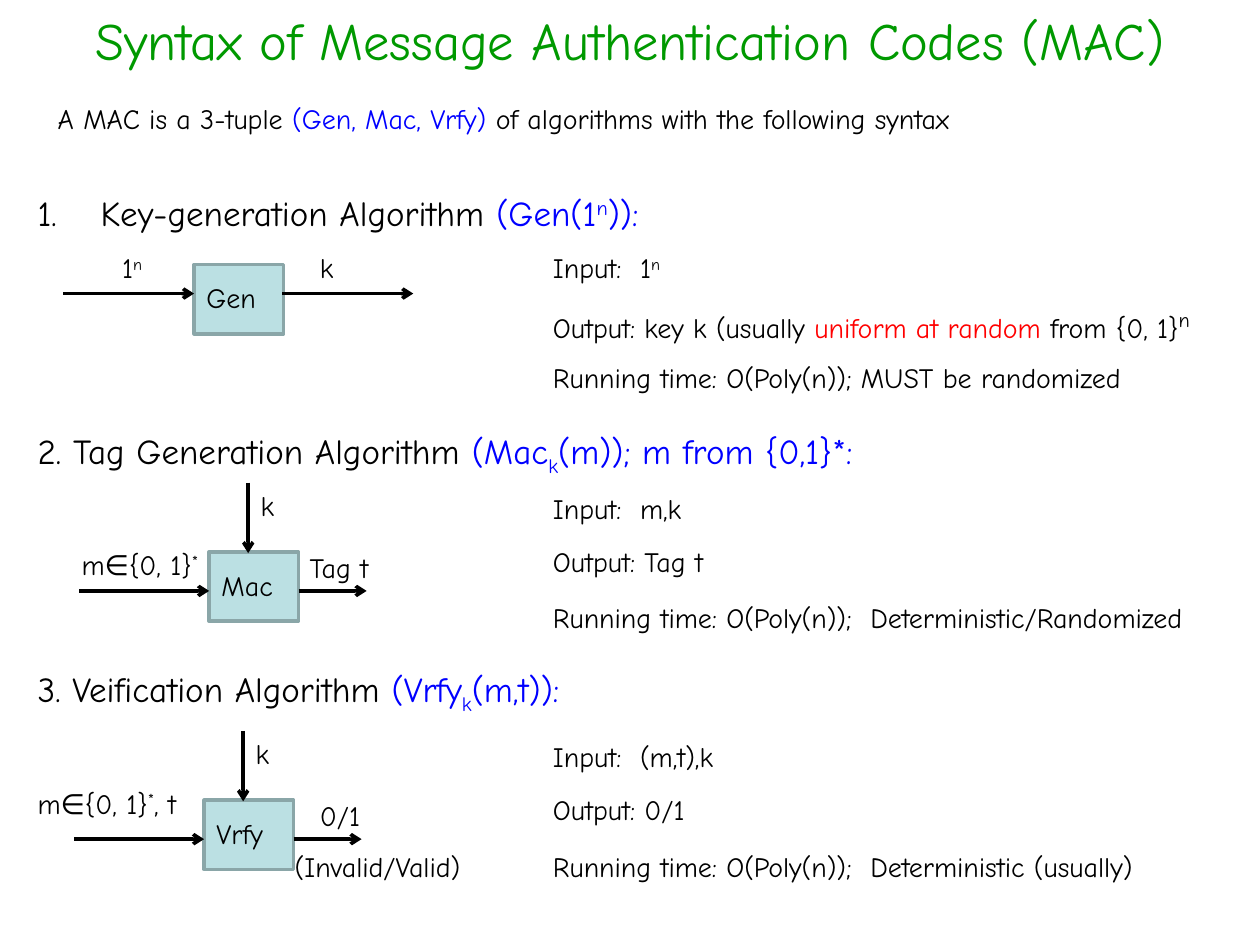
from lxml import etree
from pptx import Presentation
from pptx import util as u
from pptx.dml.color import RGBColor
from pptx.enum import shapes, text
from pptx.oxml import ns

PX = 9144
BLACK, BLUE, RED, GREEN = "000000", "0000FF", "FF0000", "009900"


def px(n):
    return u.Emu(n * PX)


def rgb(value):
    return RGBColor.from_string(value)


class Board:
    font = "Comic Neue"
    size = 16
    fill = "BBE0E3"
    edge = "8AA6A8"
    weight = 2

    def __init__(self, slide):
        self.slide = slide

    def add_runs(self, tf, runs, size):
        tf.word_wrap = True
        tf.vertical_anchor = text.MSO_ANCHOR.TOP
        p = tf.paragraphs[0]
        for words, color, base, *own in runs:
            r = p.add_run()
            r.text = words
            r.font.name = self.font
            r.font.size = u.Pt(own[0] if own else size)
            r.font.color.rgb = rgb(color)
            if base:
                r.font._element.set("baseline", str(base * 1000))
        return p

    def title(self, x, y, w, h, words):
        sp = self.slide.shapes.title
        sp.left, sp.top, sp.width, sp.height = map(px, (x, y, w, h))
        sp.text_frame.auto_size = text.MSO_AUTO_SIZE.NONE
        p = self.add_runs(sp.text_frame, [(words, GREEN, 0)], 30)
        p.alignment = text.PP_ALIGN.CENTER

    def label(self, x, y, w, runs, h=37, size=None):
        if isinstance(runs, str):
            runs = [(runs, BLACK, 0)]
        sp = self.slide.shapes.add_textbox(*map(px, (x, y, w, h)))
        return self.add_runs(sp.text_frame, runs, size or self.size)

    def heading(self, y, runs):
        return self.label(20, y, 929, runs, 44, 20)

    def numbered(self, y, runs):
        pPr = self.heading(y, runs)._p.get_or_add_pPr()
        pPr.set("marL", str(px(50)))
        pPr.set("indent", str(px(-50)))
        etree.SubElement(pPr, ns.qn("a:buFont"), typeface=self.font)
        etree.SubElement(pPr, ns.qn("a:buAutoNum"), type="arabicPeriod")

    def box(self, x, y, name):
        sp = self.slide.shapes.add_shape(
            shapes.MSO_SHAPE.RECTANGLE, *map(px, (x, y, 71, 55)))
        sp.shadow.inherit = False
        sp.fill.solid()
        sp.fill.fore_color.rgb = rgb(self.fill)
        sp.line.color.rgb = rgb(self.edge)
        sp.line.width = u.Pt(self.weight)
        self.label(x, y + 8, 86, name)

    def arrow(self, x1, y1, x2, y2):
        sp = self.slide.shapes.add_connector(
            shapes.MSO_CONNECTOR.STRAIGHT, *map(px, (x1, y1, x2, y2)))
        sp.line.color.rgb = rgb(BLACK)
        sp.line.width = u.Pt(self.weight)
        spPr = sp._element.spPr
        etree.SubElement(spPr.get_or_add_ln(), ns.qn("a:tailEnd"), type="arrow")
        etree.SubElement(spPr, ns.qn("a:effectLst"))

    def keyed_box(self, x, y, name):
        self.box(x, y, name)
        self.arrow(x - 103, y + 31, x, y + 31)
        self.arrow(x + 71, y + 31, x + 125, y + 31)
        self.arrow(x + 31, y - 55, x + 31, y + 1)
        self.label(x + 31, y - 55, 51, "k")

    def facts(self, rows):
        for y, runs in rows:
            self.label(429, y, 610, runs)


def main():
    prs = Presentation()
    prs.slide_width, prs.slide_height = px(1000), px(750)
    board = Board(prs.slides.add_slide(prs.slide_layouts[5]))

    board.title(0, 1, 1000, 51, "Syntax of Message Authentication Codes (MAC)")
    board.label(36, 76, 842, [
        ("A MAC is a 3-tuple ", BLACK, 0),
        ("(Gen, Mac, Vrfy) ", BLUE, 0),
        ("of algorithms with the following syntax", BLACK, 0)])

    security = [("1", BLACK, 0), ("n", BLACK, 30)]
    message = [("m∈{0, 1}", BLACK, 0), ("*", BLACK, 30)]

    board.numbered(147, [
        ("Key-generation Algorithm ", BLACK, 0),
        ("(Gen(1", BLUE, 0), ("n", BLUE, 30), (")):", BLUE, 0)])
    board.box(154, 210, "Gen")
    for x in (50, 224):
        board.arrow(x, 233, x + 104, 233)
    board.label(87, 194, 51, security)
    board.label(244, 194, 51, "k")
    board.facts([
        (194, [("Input:  ", BLACK, 0)] + security),
        (236, [("Output: key k (usually ", BLACK, 0),
               ("uniform at random ", RED, 0),
               ("from {0, 1}", BLACK, 0), ("n", BLACK, 30, 20)]),
        (281, "Running time: O(Poly(n)); MUST be randomized")])

    board.heading(336, [
        ("2. Tag Generation Algorithm ", BLACK, 0),
        ("(Mac", BLUE, 0), ("k", BLUE, -25), ("(m)); m from {0,1}*:", BLUE, 0)])
    board.keyed_box(166, 438, "Mac")
    board.label(55, 430, 126, message)
    board.label(236, 432, 161, "Tag t")
    board.facts([
        (385, "Input:  m,k"),
        (427, "Output: Tag t"),
        (472, "Running time: O(Poly(n));  Deterministic/Randomized")])

    board.heading(525, [
        ("3. Veification Algorithm ", BLACK, 0),
        ("(Vrfy", BLUE, 0), ("k", BLUE, -25), ("(m,t)):", BLUE, 0)])
    board.keyed_box(162, 635, "Vrfy")
    board.label(20, 619, 142, message + [(", t", BLACK, 0)])
    board.label(244, 629, 161, "0/1")
    board.label(224, 669, 181, "(Invalid/Valid)")
    board.facts([
        (582, "Input:  (m,t),k"),
        (624, "Output: 0/1"),
        (669, "Running time: O(Poly(n));  Deterministic (usually)")])

    prs.save("out.pptx")


if __name__ == "__main__":
    main()
